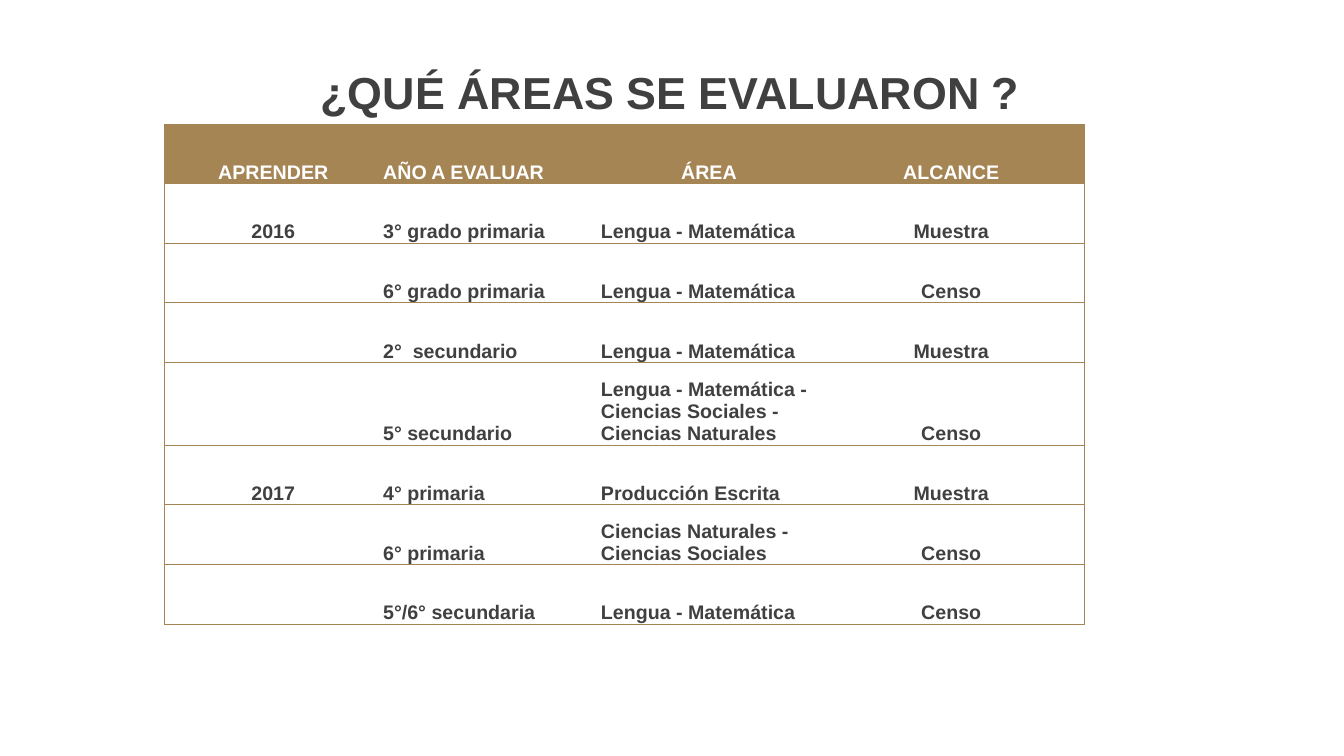
import pptx
import pptx.dml.color
import pptx.enum.text
import pptx.oxml
import pptx.oxml.ns
import pptx.util

Pt = pptx.util.Pt
ALIGN = pptx.enum.text.PP_ALIGN
BOTTOM = pptx.enum.text.MSO_ANCHOR.BOTTOM
GOLD, GRAY, WHITE = "A68555", "404040", "FFFFFF"
NO_STYLE = "{2D5ABB26-0587-4C30-8999-92F81FD0307C}"


def write(frame, text, size=14, color=GRAY, align=ALIGN.LEFT, spacing=1.0):
    para = frame.paragraphs[0]
    para.alignment = align
    para.line_spacing = spacing
    span = para.add_run()
    span.text = text
    span.font.name = "Arial"
    span.font.size = Pt(size)
    span.font.bold = True
    span.font.color.rgb = pptx.dml.color.RGBColor.from_string(color)


def add_borders(cell, sides):
    """Draw thin gold lines on the given sides; call before setting the fill."""
    properties = cell._tc.get_or_add_tcPr()
    for side in sides:
        properties.append(pptx.oxml.parse_xml(
            f'<a:ln{side} {pptx.oxml.ns.nsdecls("a")} w="{Pt(0.5)}"><a:solidFill>'
            f'<a:srgbClr val="{GOLD}"/></a:solidFill></a:ln{side}>'))


deck = pptx.Presentation()
deck.slide_width = Pt(960)
deck.slide_height = Pt(540)
page = deck.slides.add_slide(deck.slide_layouts[5])

title = page.shapes.title
title.left, title.top, title.width, title.height = Pt(117.4), Pt(28.8), Pt(722.9), Pt(59.8)
title.text_frame.vertical_anchor = BOTTOM
write(title.text_frame, "¿QUÉ ÁREAS SE EVALUARON ?", size=32, align=ALIGN.CENTER, spacing=0.9)

rows = [
    ("APRENDER", "AÑO A EVALUAR", "ÁREA", "ALCANCE"),
    ("2016", "3° grado primaria", "Lengua - Matemática", "Muestra"),
    ("", "6° grado primaria", "Lengua - Matemática", "Censo"),
    ("", "2°  secundario", "Lengua - Matemática", "Muestra"),
    ("", "5° secundario", "Lengua - Matemática - Ciencias Sociales - Ciencias Naturales", "Censo"),
    ("2017", "4° primaria", "Producción Escrita", "Muestra"),
    ("", "6° primaria", "Ciencias Naturales - Ciencias Sociales", "Censo"),
    ("", "5°/6° secundaria", "Lengua - Matemática", "Censo"),
]
widths = [155.6, 155.6, 155.6, 190.6]
heights = [42.1, 42.7, 42.7, 42.7, 58.8, 42.7, 42.7, 42.7]

frame = page.shapes.add_table(len(rows), len(widths), Pt(117.4), Pt(88.8),
                              Pt(sum(widths)), Pt(sum(heights)))
table = frame.table
table.first_row = table.horz_banding = False
table._tbl.tblPr.find(pptx.oxml.ns.qn("a:tableStyleId")).text = NO_STYLE
for column, width in zip(table.columns, widths):
    column.width = Pt(width)

for row_index, (texts, height) in enumerate(zip(rows, heights)):
    table.rows[row_index].height = Pt(height)
    is_header = row_index == 0
    for column_index, text in enumerate(texts):
        cell = table.cell(row_index, column_index)
        cell.margin_left = cell.margin_right = cell.margin_top = Pt(0.7)
        cell.margin_bottom = 0
        cell.vertical_anchor = BOTTOM
        sides = ["T", "B"]
        if column_index == 0:
            sides.insert(0, "L")
        if column_index == len(widths) - 1:
            sides.insert(0, "R")
        add_borders(cell, sides)
        if is_header:
            cell.fill.solid()
            cell.fill.fore_color.rgb = pptx.dml.color.RGBColor.from_string(GOLD)
        else:
            cell.fill.background()
        if text:
            centered = column_index in (0, 3) or (is_header and column_index == 2)
            write(cell.text_frame, text, color=WHITE if is_header else GRAY,
                  align=ALIGN.CENTER if centered else ALIGN.LEFT)

deck.save("out.pptx")
